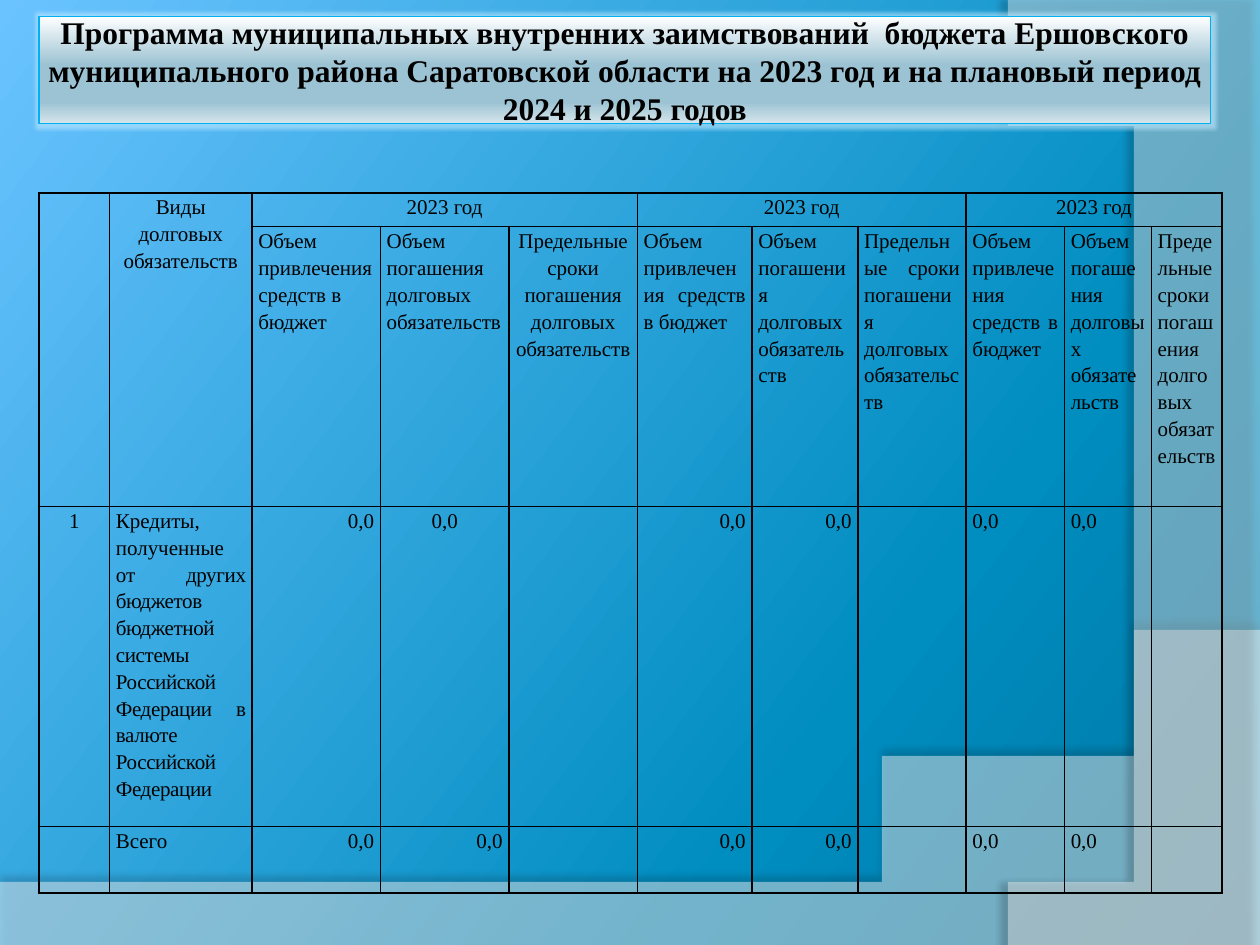
from dataclasses import dataclass

from lxml import etree
from pptx import Presentation
from pptx.dml.color import RGBColor
from pptx.enum.text import MSO_ANCHOR, PP_ALIGN
from pptx.oxml.ns import qn
from pptx.util import Inches, Pt

LEFT, MID, RIGHT, JUST = PP_ALIGN.LEFT, PP_ALIGN.CENTER, PP_ALIGN.RIGHT, PP_ALIGN.JUSTIFY
CENTRE = MSO_ANCHOR.MIDDLE

BLACK = RGBColor(0x00, 0x00, 0x00)
WHITE = RGBColor(0xFF, 0xFF, 0xFF)
DEEP = RGBColor(0x00, 0x76, 0xA1)
BLUE = RGBColor(0x00, 0x8D, 0xC0)
SKY = RGBColor(0x6A, 0xC3, 0xFF)
STEEL = RGBColor(0x9C, 0xC3, 0xD3)
MIST = RGBColor(0xD5, 0xE5, 0xEB)
EDGE = RGBColor(0x00, 0xB0, 0xF0)
GLOW = RGBColor(0xBF, 0xE9, 0xFF)
FONT = "Times New Roman"

Point = tuple[float, float]


@dataclass
class Wave:
    start: list[Point]
    curve: list[Point]  # two handles and the end point
    alpha: int
    shade: int
    dist: float
    turn: int


@dataclass
class Entry:
    row: int
    col: int
    text: str
    align: PP_ALIGN
    tight: str = ""  # second run, slightly condensed


def add_node(owner, tag: str, **attrs):
    return etree.SubElement(owner, qn(tag), {k: str(v) for k, v in attrs.items()})


def add_tint(owner, color: RGBColor, alpha: int = 100):
    tint = add_node(owner, "a:srgbClr", val=color)
    if alpha < 100:
        add_node(tint, "a:alpha", val=alpha * 1000)


def set_blend(fill, owner, stops: list[tuple[int, RGBColor]], angle: int):
    fill.gradient()
    fill.gradient_angle = angle
    ramp = owner.find(".//" + qn("a:gsLst"))
    for stop in list(ramp):
        ramp.remove(stop)
    for pos, color in stops:
        add_tint(add_node(ramp, "a:gs", pos=pos * 1000), color)


def bezier(start: Point, curve: list[Point], steps: int = 60) -> list[Point]:
    knots = [start, *curve]
    points = []
    for i in range(1, steps + 1):
        t = i / steps
        u = 1 - t
        parts = (u**3, 3 * u * u * t, 3 * u * t * t, t**3)
        points.append(tuple(sum(w * k[a] for w, k in zip(parts, knots)) for a in (0, 1)))
    return points


def draw_wave(slide, wave: Wave):
    points = wave.start + bezier(wave.start[-1], wave.curve)
    pen = slide.shapes.build_freeform(*points[0], scale=Inches(1))
    pen.add_line_segments(points[1:], close=True)
    shape = pen.convert_to_shape()
    shape.fill.solid()
    shape.fill.fore_color.rgb = WHITE
    tint = shape.element.spPr.find(qn("a:solidFill"))[0]
    add_node(tint, "a:alpha", val=wave.alpha * 1000)
    shape.line.fill.background()
    effects = add_node(shape.element.spPr, "a:effectLst")
    shadow = add_node(effects, "a:outerShdw", blurRad=Pt(4), dist=Pt(wave.dist),
                      dir=wave.turn * 60000, algn="ctr", rotWithShape=0)
    add_tint(shadow, BLACK, wave.shade)


def add_run(para, text: str, size: int, bold: bool = False):
    run = para.add_run()
    run.text = text
    run.font.name, run.font.size, run.font.bold = FONT, Pt(size), bold
    run.font.color.rgb = BLACK
    return run


def set_title(slide, text: str):
    title = slide.shapes.title
    title.left, title.top = Inches(0.31), Inches(0.13)
    title.width, title.height = Inches(9.3), Inches(0.85)
    set_blend(title.fill, title.element, [(0, WHITE), (45, STEEL), (80, STEEL), (100, MIST)], 270)
    title.line.color.rgb = EDGE
    title.line.width = Pt(0.75)
    effects = add_node(title.element.spPr, "a:effectLst")
    add_tint(add_node(effects, "a:glow", rad=Pt(4)), GLOW, 60)
    frame = title.text_frame
    frame.word_wrap = True
    frame.vertical_anchor = CENTRE
    frame.margin_left = frame.margin_right = Inches(0.05)
    frame.margin_top = frame.margin_bottom = Inches(0.05)
    para = frame.paragraphs[0]
    para.alignment = MID
    add_run(para, text, 18, True)
    slide.shapes._spTree.append(title.element)  # in front of the waves


def style_cell(cell):
    cell.margin_left = cell.margin_right = Inches(0.05)
    cell.margin_top = cell.margin_bottom = 0
    props = cell._tc.get_or_add_tcPr()
    for side in ("a:lnL", "a:lnR", "a:lnT", "a:lnB"):
        line = add_node(props, side, w=Pt(1))
        add_tint(add_node(line, "a:solidFill"), BLACK)
    cell.fill.background()
    para = cell.text_frame.paragraphs[0]
    para._p.get_or_add_endParaRPr().set("sz", "1200")


def fill_cell(table, entry: Entry):
    para = table.cell(entry.row, entry.col).text_frame.paragraphs[0]
    para.alignment = entry.align
    para.line_spacing = 1.15
    para.space_after = Pt(10)
    add_run(para, entry.text, 12)
    if entry.tight:
        run = add_run(para, entry.tight, 12)
        run._r.get_or_add_rPr().set("spc", "-20")


def draw_table(slide, entries: list[Entry]):
    cols = [0.56, 1.13, 1.02, 1.02, 1.02, 0.91, 0.84, 0.86, 0.78, 0.69, 0.56]
    rows = [0.27, 2.22, 2.54, 0.53]
    frame = slide.shapes.add_table(len(rows), len(cols), Inches(0.31), Inches(1.53),
                                   Inches(sum(cols)), Inches(sum(rows)))
    table = frame.table
    table.first_row = table.horz_banding = False
    for col, width in zip(table.columns, cols):
        col.width = Inches(width)
    for row, height in zip(table.rows, rows):
        row.height = Inches(height)
        for cell in row.cells:
            style_cell(cell)
    for col in (0, 1):
        table.cell(0, col).merge(table.cell(1, col))
    for col in YEARS:
        table.cell(0, col).merge(table.cell(0, col + 2))
    for entry in entries:
        fill_cell(table, entry)


# Content
TITLE = ("Программа муниципальных внутренних заимствований  бюджета Ершовского "
         "муниципального района Саратовской области на 2023 год и на плановый "
         "период 2024 и 2025 годов")
YEARS = (2, 5, 8)
HEADS = ("Объем привлечения средств в бюджет",
         "Объем погашения долговых обязательств",
         "Предельные сроки погашения долговых обязательств")
HEAD_ALIGN = [LEFT, JUST, MID] + [JUST] * 6
SUMS = {2: (RIGHT, MID, RIGHT, RIGHT, LEFT, LEFT),
        3: (RIGHT, RIGHT, RIGHT, RIGHT, LEFT, LEFT)}
SUM_COLS = [col + i for col in YEARS for i in (0, 1)]

ENTRIES = [
    Entry(0, 1, "Виды долговых обязательств", MID),
    *(Entry(0, col, "2023 год", MID) for col in YEARS),
    *(Entry(1, 2 + i, HEADS[i % 3], align) for i, align in enumerate(HEAD_ALIGN)),
    Entry(2, 0, "1", MID),
    Entry(2, 1, "Кредиты, полученные от ", JUST,
          "других бюджетов бюджетной системы Российской Федерации "
          "в валюте Российской Федерации"),
    Entry(3, 1, "Всего", JUST),
    *(Entry(row, col, "0,0", align)
      for row, aligns in SUMS.items() for col, align in zip(SUM_COLS, aligns)),
]

WAVES = [
    Wave([(0, 7.05), (0, 7.51), (10, 7.51), (10, 5.2)],
         [(5.59, 7.29), (3.91, 7.19), (0, 7.05)], 45, 35, 3.5, 270),
    Wave([(10, 0.02), (10, 7.5), (8.21, 7.5)],
         [(9.35, 6.19), (10.18, 3), (8, 0)], 40, 45, 4, 180),
]


def main():
    deck = Presentation()
    deck.slide_width, deck.slide_height = Inches(10), Inches(7.5)
    slide = deck.slides.add_slide(deck.slide_layouts[5])

    # Backdrop
    set_blend(slide.background.fill, slide.element, [(0, DEEP), (30, BLUE), (100, SKY)], 143)
    for wave in WAVES:
        draw_wave(slide, wave)

    # Title and table
    set_title(slide, TITLE)
    draw_table(slide, ENTRIES)
    deck.save("out.pptx")


if __name__ == "__main__":
    main()
